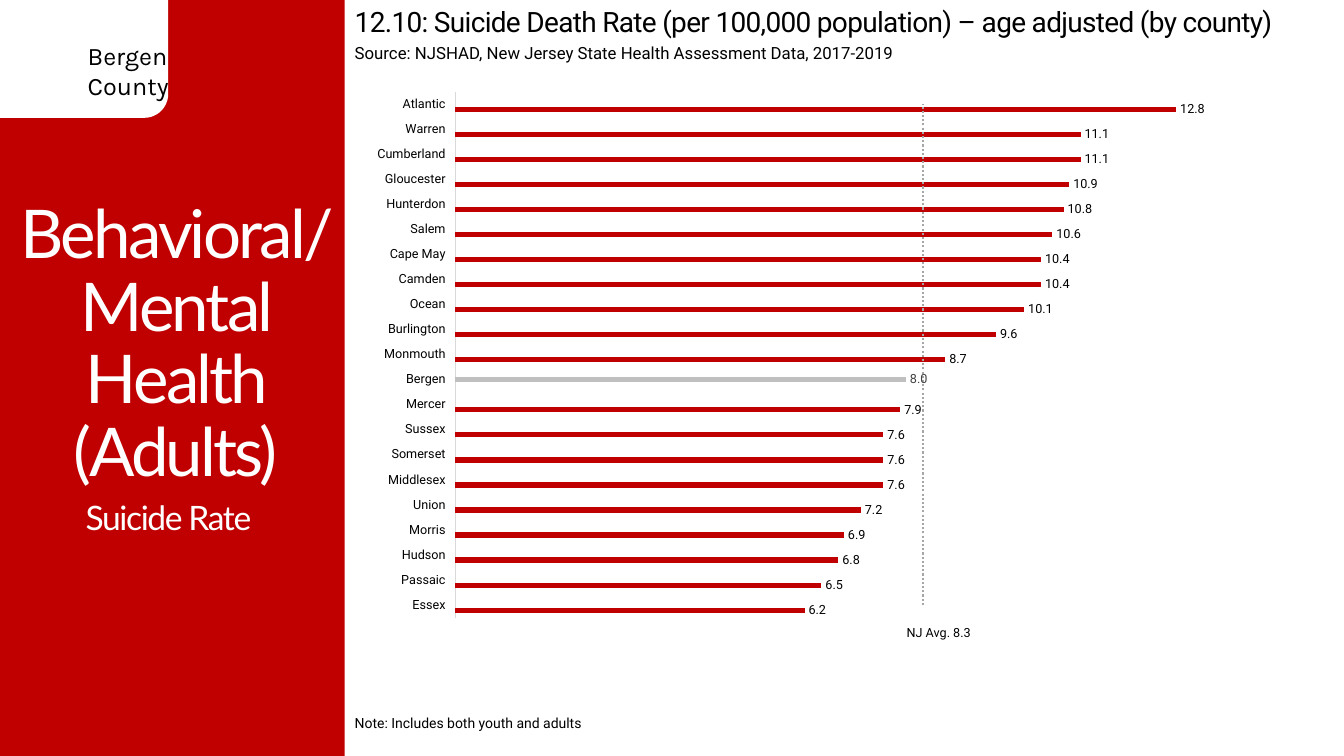
from lxml import etree
from pptx import Presentation
from pptx.chart.data import CategoryChartData
from pptx.dml.color import RGBColor
from pptx.enum.chart import XL_CHART_TYPE, XL_TICK_LABEL_POSITION, XL_TICK_MARK
from pptx.enum.shapes import MSO_SHAPE
from pptx.enum.text import MSO_ANCHOR, PP_ALIGN
from pptx.oxml import parse_xml
from pptx.oxml.ns import nsdecls, qn
from pptx.util import Cm, Pt

BAR_CLUSTERED = XL_CHART_TYPE.BAR_CLUSTERED
LABELS_LOW = XL_TICK_LABEL_POSITION.LOW
NO_TICK = XL_TICK_MARK.NONE
RECTANGLE, ROUNDED = MSO_SHAPE.RECTANGLE, MSO_SHAPE.ROUNDED_RECTANGLE
TOP, MIDDLE = MSO_ANCHOR.TOP, MSO_ANCHOR.MIDDLE
LEFT, CENTER = PP_ALIGN.LEFT, PP_ALIGN.CENTER

RED = RGBColor(0xC0, 0x00, 0x00)
WHITE = RGBColor(0xFF, 0xFF, 0xFF)
BLACK = RGBColor(0x00, 0x00, 0x00)
BERGEN_GREY = RGBColor(0xBF, 0xBF, 0xBF)
LABEL_GREY = RGBColor(0x40, 0x40, 0x40)
AXIS_GREY = RGBColor(0xD9, 0xD9, 0xD9)
AVERAGE_GREY = RGBColor(0xA6, 0xA6, 0xA6)

SLIDE_WIDTH, SLIDE_HEIGHT, PANEL_WIDTH = 33.87, 19.05, 8.69
STATE_AVERAGE = 8.3
AVERAGE_LABEL = f"NJ Avg. {STATE_AVERAGE}"
HIGHLIGHT = "Bergen"
RATES = {
    "Essex": 6.2, "Passaic": 6.5, "Hudson": 6.8, "Morris": 6.9, "Union": 7.2,
    "Middlesex": 7.6, "Somerset": 7.6, "Sussex": 7.6, "Mercer": 7.9,
    "Bergen": 8.0, "Monmouth": 8.7, "Burlington": 9.6, "Ocean": 10.1,
    "Camden": 10.4, "Cape May": 10.4, "Salem": 10.6, "Hunterdon": 10.8,
    "Gloucester": 10.9, "Cumberland": 11.1, "Warren": 11.1, "Atlantic": 12.8,
}


def set_font(font, name, size, color):
    """Apply a typeface, size and colour."""
    font.name = name
    font.size = Pt(size)
    font.color.rgb = color


def add_text(slide, box, lines, name, size, color=BLACK, align=LEFT,
             anchor=TOP, tracking=0, line_spacing=1.0):
    """Add a wrapped text box with one paragraph per line."""
    frame = slide.shapes.add_textbox(*map(Cm, box)).text_frame
    frame.word_wrap = True
    frame.vertical_anchor = anchor
    frame.text = "\n".join(lines)
    for paragraph in frame.paragraphs:
        paragraph.alignment = align
        paragraph.line_spacing = line_spacing
        set_font(paragraph.font, name, size, color)
        if tracking:
            for run in paragraph.runs:
                run._r.get_or_add_rPr().set("spc", str(int(tracking * 100)))


def add_block(slide, kind, box, color):
    """Add a plain filled shape."""
    shape = slide.shapes.add_shape(kind, *map(Cm, box))
    shape.shadow.inherit = False
    shape.fill.solid()
    shape.fill.fore_color.rgb = color
    shape.line.fill.background()


def add_panel(slide, box):
    """Build the red side panel with the county tab and topic."""
    left, top, width, height = box
    add_block(slide, RECTANGLE, box, RED)
    add_block(slide, ROUNDED, (left - 0.84, top - 0.64, 5.08, 3.61), WHITE)
    add_text(slide, (left + 1.96, top + 0.89, 2.8, 1.8),
             ["Bergen", "County"], "Karla", 18)
    add_text(slide, (left - 0.1, top + 12.5, width, 1.17), ["Suicide Rate"],
             "Lato", 24, WHITE, CENTER, tracking=-1, line_spacing=0.9)
    add_text(slide, (left - 0.08, top + 1.7, width + 0.33, 14.02),
             ["Behavioral/ Mental Health (Adults)"],
             "Lato", 48, WHITE, CENTER, MIDDLE, -2, 0.9)


def add_captions(slide, box):
    """Place the heading, source and note in the content area."""
    left, top, width, height = box
    add_text(slide, (left, top, width, 1.12),
             ["12.10: Suicide Death Rate (per 100,000 population) – "
              "age adjusted (by county)"], "Roboto", 20, tracking=-0.5)
    add_text(slide, (left, top + 0.94, width, 1.27),
             ["Source: NJSHAD, New Jersey State Health Assessment Data, "
              "2017-2019"], "Roboto", 12)
    add_text(slide, (left, top + height - 1.47, width, 1.27),
             ["Note: Includes both youth and adults"],
             "Roboto", 10, anchor=MIDDLE)


def set_plot_layout(chart, x, y, width, height):
    """Fix the inner plot area as fractions of the chart."""
    plot_area = chart._chartSpace.chart.plotArea
    for layout in plot_area.findall(qn("c:layout")):
        plot_area.remove(layout)
    layout = etree.Element(qn("c:layout"))
    manual = etree.SubElement(layout, qn("c:manualLayout"))
    for tag, value in (("layoutTarget", "inner"), ("xMode", "edge"),
                       ("yMode", "edge"), ("x", x), ("y", y),
                       ("w", width), ("h", height)):
        etree.SubElement(manual, qn(f"c:{tag}")).set("val", str(value))
    plot_area.insert(0, layout)


def add_average_line(series):
    """Give the average series a dotted linear trend line."""
    trend = parse_xml(
        f'<c:trendline {nsdecls("c", "a")}><c:spPr><a:ln w="{Pt(1.5)}">'
        f'<a:solidFill><a:srgbClr val="{AVERAGE_GREY}"/></a:solidFill>'
        '<a:prstDash val="sysDot"/></a:ln></c:spPr>'
        '<c:trendlineType val="linear"/><c:dispRSqr val="0"/>'
        '<c:dispEq val="0"/></c:trendline>')
    series._element.find(qn("c:cat")).addprevious(trend)


def add_rate_chart(slide, box):
    """Build the county bar chart and label its average line."""
    left, top, width, height = box
    data = CategoryChartData(number_format="0.0")
    data.categories = list(RATES)
    data.add_series("Suicide Death Rate", [
        None if county == HIGHLIGHT else rate for county, rate in RATES.items()])
    data.add_series(HIGHLIGHT, [
        rate if county == HIGHLIGHT else None for county, rate in RATES.items()])
    data.add_series(AVERAGE_LABEL, [STATE_AVERAGE] * len(RATES))
    chart = slide.shapes.add_chart(BAR_CLUSTERED, *map(Cm, box), data).chart
    chart.has_title = False
    chart.has_legend = False
    set_font(chart.font, "Calibri", 10, BLACK)
    set_plot_layout(chart, 0.1, 0.02, 0.88, 0.88)

    counties, rates = chart.category_axis, chart.value_axis
    set_font(counties.tick_labels.font, "Roboto", 9, BLACK)
    counties.tick_label_position = LABELS_LOW
    counties.major_tick_mark = NO_TICK
    counties.minor_tick_mark = NO_TICK
    counties.format.line.color.rgb = AXIS_GREY
    counties.format.line.width = Pt(0.75)
    rates.minimum_scale, rates.maximum_scale = 0, 14
    rates.has_major_gridlines = False
    rates.visible = False

    plot = chart.plots[0]
    plot.gap_width, plot.overlap = 182, 0
    plot.vary_by_categories = False
    others, bergen, average = plot.series
    for series, fill, text in ((others, RED, BLACK),
                               (bergen, BERGEN_GREY, LABEL_GREY)):
        series.format.fill.solid()
        series.format.fill.fore_color.rgb = fill
        labels = series.data_labels
        labels.show_value = True
        labels.number_format = "#,##0.0"
        labels.number_format_is_linked = False
        set_font(labels.font, "Roboto", 9, text)
    average.format.fill.background()
    add_average_line(average)
    add_text(slide, (left + 13.38, top + 13.62, 2.4, 0.64),
             [AVERAGE_LABEL], "Roboto", 9)


def main():
    """Create and save the presentation."""
    presentation = Presentation()
    presentation.slide_width = Cm(SLIDE_WIDTH)
    presentation.slide_height = Cm(SLIDE_HEIGHT)
    slide = presentation.slides.add_slide(presentation.slide_layouts[6])
    add_panel(slide, (0, 0, PANEL_WIDTH, SLIDE_HEIGHT))
    add_captions(slide, (PANEL_WIDTH, 0, 25.04, SLIDE_HEIGHT))
    add_rate_chart(slide, (PANEL_WIDTH + 0.53, 2.01, 22.58, 15.06))
    presentation.save("out.pptx")


if __name__ == "__main__":
    main()
